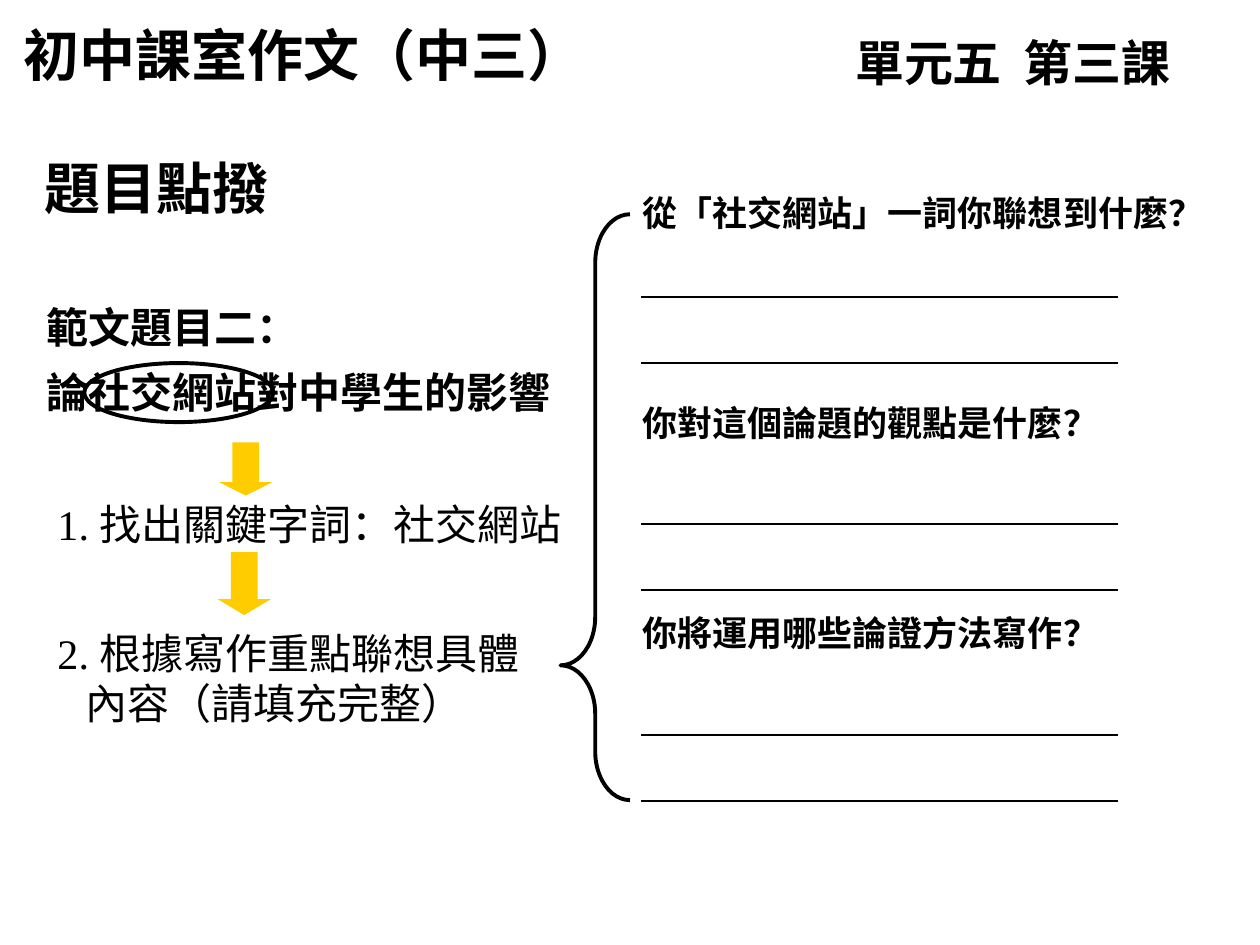
import pptx
import pptx.util
import pptx.dml.color
import pptx.enum.shapes
import pptx.enum.text
import pptx.oxml.ns
from lxml import etree

Cm = pptx.util.Cm
Pt = pptx.util.Pt
SHAPES = pptx.enum.shapes.MSO_SHAPE
COLOURS = {"ink": "000000", "arrow": "FFCC00"}


def colour(name):
    return pptx.dml.color.RGBColor.from_string(COLOURS[name])


def add_box(page, left, top, width, height):
    box = page.shapes.add_textbox(Cm(left), Cm(top), Cm(width), Cm(height))
    frame = box.text_frame
    frame.word_wrap = True
    frame.auto_size = pptx.enum.text.MSO_AUTO_SIZE.NONE
    return frame


def add_span(para, text, font, size, bold=False):
    span = para.add_run()
    span.text = text
    span.font.name = font
    span.font.size = Pt(size)
    span.font.bold = bold
    span.font.color.rgb = colour("ink")
    east_asian = etree.SubElement(span.font._element, pptx.oxml.ns.qn("a:ea"))
    east_asian.set("typeface", font)


def add_paras(frame, texts, font, size, line_spacing=None, gap=0):
    for index, text in enumerate(texts):
        para = frame.paragraphs[0] if index == 0 else frame.add_paragraph()
        if line_spacing:
            para.line_spacing = line_spacing
        if index and gap:
            para.space_before = Pt(gap)
        add_span(para, text, font, size, True)


def add_outline(page, kind, left, top, width, height):
    shape = page.shapes.add_shape(kind, Cm(left), Cm(top), Cm(width), Cm(height))
    shape.shadow.inherit = False
    shape.fill.background()
    shape.line.color.rgb = colour("ink")
    shape.line.width = Pt(2.25)
    return shape


def add_down_arrow(page, left, top, width, height, head):
    arrow = page.shapes.add_shape(SHAPES.DOWN_ARROW, Cm(left), Cm(top), Cm(width), Cm(height))
    arrow.shadow.inherit = False
    arrow.fill.solid()
    arrow.fill.fore_color.rgb = colour("arrow")
    arrow.line.fill.background()
    arrow.adjustments[0] = 0.5
    arrow.adjustments[1] = head


def add_answer_line(page, left, top, width):
    line = page.shapes.add_connector(
        pptx.enum.shapes.MSO_CONNECTOR.STRAIGHT, Cm(left), Cm(top), Cm(left + width), Cm(top))
    line.line.color.rgb = colour("ink")
    line.line.width = Pt(1)
    etree.SubElement(line._element.spPr, pptx.oxml.ns.qn("a:effectLst"))


def add_header(page, left, top, width):
    add_paras(add_box(page, left, top, 13.26, 1.6), ["初中課室作文（中三）"], "Cabin", 32)
    unit = add_box(page, left + width - 8.4, top + 0.25, 8.4, 1.45)
    para = unit.paragraphs[0]
    tabs = etree.SubElement(para._p.get_or_add_pPr(), pptx.oxml.ns.qn("a:tabLst"))
    tab = etree.SubElement(tabs, pptx.oxml.ns.qn("a:tab"))
    tab.set("pos", str(Cm(3.4)))
    tab.set("algn", "l")
    add_span(para, "單元五\t第三課", "Cabin", 28, True)


def add_topic(page, left, top, width):
    add_paras(add_box(page, left, top, 7.82, 1.6), ["題目點撥"], "Arial", 32)
    topic = add_box(page, left + 0.05, top + 2.67, width, 4.22)
    add_paras(topic, ["範文題目二：", "論社交網站對中學生的影響"], "DejaVu Sans", 24, line_spacing=1.3)
    add_outline(page, SHAPES.OVAL, left + 1.06, top + 4.35, 3.81, 1.19)


def add_steps(page, left, top, width):
    add_down_arrow(page, left + 3.51, top, 1.07, 1.07, 0.25)
    add_down_arrow(page, left + 3.48, top + 2.21, 1.07, 1.27, 0.3)
    steps = [("1. ", "找出關鍵字詞：社交網站", 1.01, width, 1.27),
             ("2. ", "根據寫作重點聯想具體", 3.6, 10.59, 2.29)]
    for number, text, offset, box_width, height in steps:
        frame = add_box(page, left, top + offset, box_width, height)
        add_span(frame.paragraphs[0], number, "Times New Roman", 24)
        add_span(frame.paragraphs[0], text, "DejaVu Sans", 24)
    detail = frame.add_paragraph()
    detail._p.get_or_add_pPr().set("marL", str(Cm(0.57)))
    add_span(detail, "內容（請填充完整）", "DejaVu Sans", 24)


def add_questions(page, left, top, width):
    brace = add_outline(page, SHAPES.LEFT_BRACE, left, top + 0.59, 1.4, 11.81)
    brace.adjustments[0] = 0.7
    brace.adjustments[1] = 0.77
    questions = ["從「社交網站」一詞你聯想到什麼？", "你對這個論題的觀點是什麼？", "你將運用哪些論證方法寫作？"]
    frame = add_box(page, left + 1.4, top, width - 1.4, 11.02)
    add_paras(frame, questions, "DejaVu Sans", 20, gap=96)
    for first_line in (2.26, 6.84, 11.08):
        for offset in (0, 1.33):
            add_answer_line(page, left + 1.63, top + first_line + offset, 9.6)


def main():
    deck = pptx.Presentation()
    deck.slide_width, deck.slide_height = Cm(25.4), Cm(19.05)
    page = deck.slides.add_slide(deck.slide_layouts[6])
    add_header(page, 0.23, 0.28, 25.16)
    add_topic(page, 0.64, 2.97, 12.7)
    add_steps(page, 0.91, 8.92, 12.6)
    add_questions(page, 11.3, 3.73, 13.21)
    deck.save("out.pptx")


if __name__ == "__main__":
    main()
